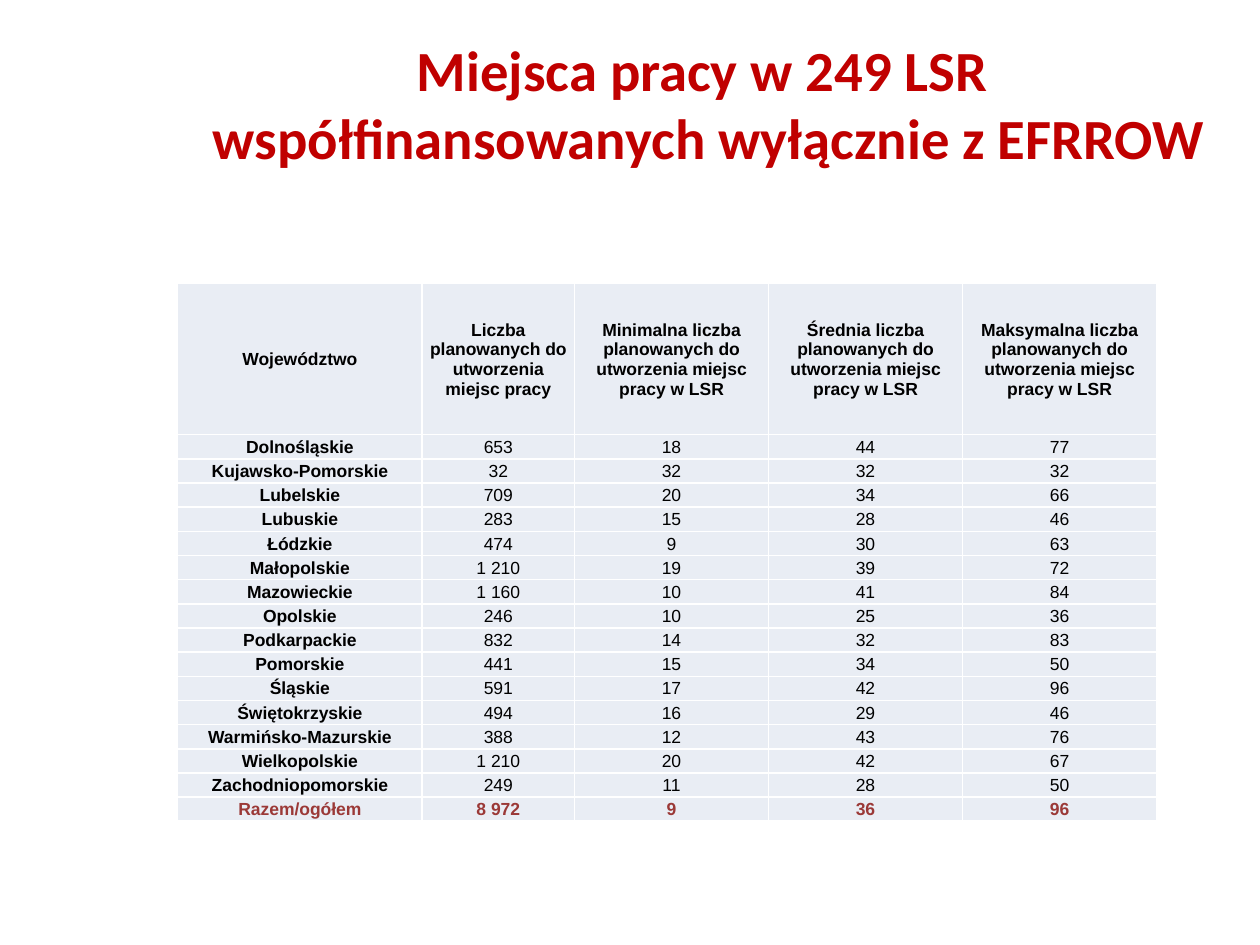
import pptx
import pptx.dml.color
import pptx.enum.text
import pptx.oxml
import pptx.oxml.ns
import pptx.util

Inches = pptx.util.Inches
Pt = pptx.util.Pt
RGBColor = pptx.dml.color.RGBColor
PP_ALIGN = pptx.enum.text.PP_ALIGN
MSO_ANCHOR = pptx.enum.text.MSO_ANCHOR

TITLE = "Miejsca pracy w 249 LSR \vwspółfinansowanych wyłącznie z EFRROW"
ROWS = [
    ("Województwo",
     "Liczba planowanych do utworzenia miejsc pracy",
     "Minimalna liczba planowanych do utworzenia miejsc pracy w LSR",
     "Średnia liczba planowanych do utworzenia miejsc pracy w LSR",
     "Maksymalna liczba planowanych do utworzenia miejsc pracy w LSR"),
    ("Dolnośląskie", "653", "18", "44", "77"),
    ("Kujawsko-Pomorskie", "32", "32", "32", "32"),
    ("Lubelskie", "709", "20", "34", "66"),
    ("Lubuskie", "283", "15", "28", "46"),
    ("Łódzkie", "474", "9", "30", "63"),
    ("Małopolskie", "1 210", "19", "39", "72"),
    ("Mazowieckie", "1 160", "10", "41", "84"),
    ("Opolskie", "246", "10", "25", "36"),
    ("Podkarpackie", "832", "14", "32", "83"),
    ("Pomorskie", "441", "15", "34", "50"),
    ("Śląskie", "591", "17", "42", "96"),
    ("Świętokrzyskie", "494", "16", "29", "46"),
    ("Warmińsko-Mazurskie", "388", "12", "43", "76"),
    ("Wielkopolskie", "1 210", "20", "42", "67"),
    ("Zachodniopomorskie", "249", "11", "28", "50"),
    ("Razem/ogółem", "8 972", "9", "36", "96"),
]
COL_WIDTHS = (1.94, 1.21, 1.54, 1.54, 1.54)
HEADER_H = 1.2
TABLE_H = 4.27

RED = RGBColor(0xC0, 0x00, 0x00)
TOTAL_RED = RGBColor(0x9B, 0x39, 0x37)
BLACK = RGBColor(0x00, 0x00, 0x00)
WHITE = RGBColor(0xFF, 0xFF, 0xFF)
CELL_FILL = RGBColor(0xE9, 0xED, 0xF4)


def format_text(tf, font_name, size, color, bold):
    for p in tf.paragraphs:
        p.alignment = PP_ALIGN.CENTER
        for r in p.runs:
            r.font.name = font_name
            r.font.size = Pt(size)
            r.font.bold = bold
            r.font.color.rgb = color


def set_borders(cell, color):
    tcPr = cell._tc.get_or_add_tcPr()
    for side in ("lnL", "lnR", "lnT", "lnB"):
        tcPr.append(pptx.oxml.parse_xml(
            f'<a:{side} {pptx.oxml.ns.nsdecls("a")} w="{Pt(1)}"><a:solidFill>'
            f'<a:srgbClr val="{color}"/></a:solidFill></a:{side}>'))


def add_title(slide):
    sp = slide.shapes.title
    sp.left, sp.top = Inches(1.33), Inches(0.08)
    sp.width, sp.height = Inches(8.59), Inches(1.47)
    tf = sp.text_frame
    tf.text = TITLE
    tf.auto_size = pptx.enum.text.MSO_AUTO_SIZE.NONE
    tf.vertical_anchor = MSO_ANCHOR.MIDDLE
    format_text(tf, "Calibri", 32.4, RED, True)


def add_jobs_table(slide):
    last = len(ROWS) - 1
    table = slide.shapes.add_table(
        len(ROWS), len(COL_WIDTHS), Inches(1.41), Inches(2.25),
        Inches(sum(COL_WIDTHS)), Inches(TABLE_H)).table
    table.first_row = False
    table.horz_banding = False
    for column, width in zip(table.columns, COL_WIDTHS):
        column.width = Inches(width)
    for i, values in enumerate(ROWS):
        table.rows[i].height = Inches((TABLE_H - HEADER_H) / last if i else HEADER_H)
        for j, value in enumerate(values):
            cell = table.cell(i, j)
            cell.text_frame.text = value
            cell.margin_left = cell.margin_right = cell.margin_top = Inches(0.01)
            cell.margin_bottom = 0
            cell.vertical_anchor = MSO_ANCHOR.MIDDLE
            set_borders(cell, WHITE)
            cell.fill.solid()
            cell.fill.fore_color.rgb = CELL_FILL
            format_text(cell.text_frame, "Arial", 10,
                        TOTAL_RED if i == last else BLACK,
                        i in (0, last) or j == 0)


def main():
    prs = pptx.Presentation()
    prs.slide_width, prs.slide_height = Inches(10), Inches(7.5)
    slide = prs.slides.add_slide(prs.slide_layouts[5])
    add_title(slide)
    add_jobs_table(slide)
    prs.save("out.pptx")


if __name__ == "__main__":
    main()
